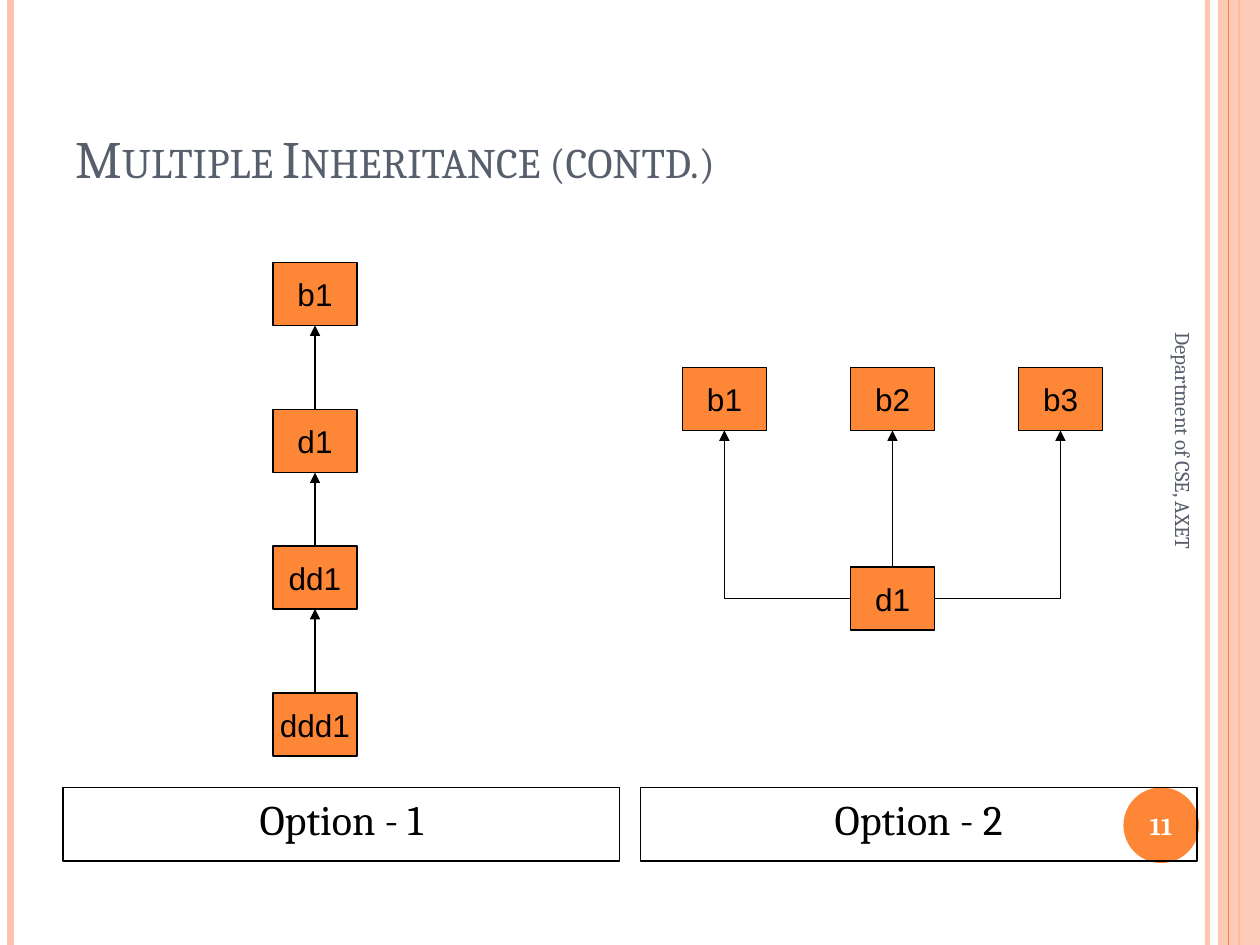
import pptx
import pptx.dml.color
import pptx.enum.shapes
import pptx.enum.text
import pptx.oxml
import pptx.oxml.ns
import pptx.util

SCALE = 914400 // 120
ORANGE, PEACH, SLATE, BLACK, WHITE = "FE8637", "FEC3AE", "575F6D", "000000", "FFFFFF"
NODE_WIDTH, NODE_HEIGHT = 80, 60
TOP, LEFT, BOTTOM, RIGHT = range(4)
SHAPE = pptx.enum.shapes.MSO_SHAPE
CONNECTOR = pptx.enum.shapes.MSO_CONNECTOR
ALIGN = pptx.enum.text.PP_ALIGN
ANCHOR = pptx.enum.text.MSO_ANCHOR


def px(*lengths):
    """Turn px lengths into EMU."""
    return [pptx.util.Emu(length * SCALE) for length in lengths]


def color(value):
    """Turn a hex string into a colour."""
    return pptx.dml.color.RGBColor.from_string(value)


def append_xml(parent, tag, **attributes):
    """Append a DrawingML element to a parent and return it."""
    element = pptx.oxml.parse_xml(f"<a:{tag} {pptx.oxml.ns.nsdecls('a')}/>")
    for name, value in attributes.items():
        element.set(name, value)
    parent.append(element)
    return element


def set_opacity(shape, percent):
    """Make the colour of a shape or line partly transparent."""
    for element in shape.element.xpath("./p:spPr//a:srgbClr"):
        append_xml(element, "alpha", val=str(percent * 1000))


def set_line(shape, value, points):
    """Set the colour and width of an outline or line."""
    shape.line.color.rgb = color(value)
    shape.line.width = pptx.util.Pt(points)


def write(shape, text, size, font, value, align, anchor, bold=False):
    """Write one formatted run and return its paragraph."""
    frame = shape.text_frame
    frame.auto_size = pptx.enum.text.MSO_AUTO_SIZE.NONE
    frame.word_wrap = True
    frame.vertical_anchor = anchor
    paragraph = frame.paragraphs[0]
    paragraph.alignment = align
    run = paragraph.add_run()
    run.text = text
    run.font.size = pptx.util.Pt(size)
    run.font.name = font
    run.font.bold = bold
    run.font.color.rgb = color(value)
    return paragraph


def place(slide, shape, box):
    """Bring a placeholder to the front and fit it to a box."""
    shape.left, shape.top, shape.width, shape.height = px(*box)
    slide.shapes.element.append(shape.element)


def add_filled(slide, kind, box, value):
    """Add a flat filled shape without an outline."""
    shape = slide.shapes.add_shape(kind, *px(*box))
    shape.shadow.inherit = False
    shape.fill.solid()
    shape.fill.fore_color.rgb = color(value)
    shape.line.fill.background()
    return shape


def add_line(slide, kind, ends, value, points):
    """Add a line without a shadow."""
    line = slide.shapes.add_connector(kind, *px(*ends))
    set_line(line, value, points)
    append_xml(line.element.spPr, "effectLst")
    return line


def add_rail(slide, x, value, points):
    """Add a line over the full slide height."""
    return add_line(slide, CONNECTOR.STRAIGHT, (x, 0, x, 900), value, points)


def add_frame(slide):
    """Add the side bands, page number and footer."""
    set_opacity(add_rail(slide, 1150, PEACH, 3), 93)
    add_rail(slide, 10, PEACH, 4.5)
    add_rail(slide, 1180, ORANGE, 1.5)
    set_opacity(add_filled(slide, SHAPE.RECTANGLE, (1160, 0, 40, 900), PEACH), 87)
    add_rail(slide, 1170, ORANGE, 0.75)
    badge = add_filled(slide, SHAPE.OVAL, (1070, 750, 72, 72), ORANGE)
    write(badge, "11", 14, "Cambria", WHITE, ALIGN.CENTER, ANCHOR.MIDDLE, True)
    badge.text_frame.margin_left = badge.text_frame.margin_right = 0
    footer = slide.shapes.add_textbox(*px(917, 491, 420, 48))
    footer.rotation = 90
    write(footer, "Department of CSE, AXET", 12, "Cambria", SLATE, ALIGN.LEFT, ANCHOR.MIDDLE)


def add_title(slide, box):
    """Fill the title placeholder in small capitals."""
    title = slide.shapes.title
    place(slide, title, box)
    write(title, "Multiple Inheritance (contd.)", 30, "Cambria", SLATE, ALIGN.LEFT, ANCHOR.BOTTOM)
    title.element.xpath(".//a:rPr")[0].set("cap", "small")


def add_caption(slide, shape, box, text):
    """Fill a body placeholder with an outlined caption."""
    place(slide, shape, box)
    set_line(shape, BLACK, 0.75)
    paragraph = write(shape, text, 24, "Cambria", BLACK, ALIGN.CENTER, ANCHOR.TOP)
    paragraph.space_before = pptx.util.Pt(6)
    properties = shape.element.xpath(".//a:pPr")[0]
    indent = px(36)[0]
    properties.set("marL", str(indent))
    properties.set("indent", str(-indent))
    append_xml(properties, "buNone")


def add_node(slide, left, top, text):
    """Add one class box."""
    node = add_filled(slide, SHAPE.RECTANGLE, (left, top, NODE_WIDTH, NODE_HEIGHT), ORANGE)
    set_line(node, BLACK, 0.75)
    write(node, text, 18, "Arial", BLACK, ALIGN.CENTER, ANCHOR.MIDDLE)
    node.text_frame.word_wrap = False
    return node


def add_arrow(slide, derived, side, base):
    """Point an arrow from a side of a derived class to its base class."""
    kind = CONNECTOR.STRAIGHT if side == TOP else CONNECTOR.ELBOW
    arrow = add_line(slide, kind, (0, 0, 0, 0), BLACK, 0.75)
    arrow.begin_connect(derived, side)
    arrow.end_connect(base, BOTTOM)
    if side != TOP:
        arrow.element.xpath("./p:spPr/a:prstGeom")[0].set("prst", "bentConnector2")
    append_xml(arrow.element.xpath("./p:spPr/a:ln")[0], "tailEnd", type="triangle")


def add_chain(slide, left, top):
    """Add the column of classes that each derive from the one above."""
    levels = (("b1", 0), ("d1", 140), ("dd1", 270), ("ddd1", 410))
    nodes = [add_node(slide, left, top + offset, text) for text, offset in levels]
    for base, derived in zip(nodes, nodes[1:]):
        add_arrow(slide, derived, TOP, base)


def add_fan(slide, left, top):
    """Add three base classes and the class derived from them all."""
    step = 160
    bases = [add_node(slide, left + step * i, top, f"b{i + 1}") for i in range(3)]
    derived = add_node(slide, left + step, top + 190, "d1")
    for side, base in zip((LEFT, TOP, RIGHT), bases):
        add_arrow(slide, derived, side, base)


def main():
    """Build and save the slide."""
    presentation = pptx.Presentation()
    presentation.slide_width, presentation.slide_height = px(1200, 900)
    slide = presentation.slides.add_slide(presentation.slide_layouts[3])
    add_frame(slide)
    add_title(slide, (60, 36, 980, 150))
    captions = [slide.placeholders[1], slide.placeholders[2]]
    for i, caption in enumerate(captions):
        add_caption(slide, caption, (60 + 550 * i, 750, 530, 70), f"Option - {i + 1}")
    add_chain(slide, 260, 250)
    add_fan(slide, 650, 350)
    presentation.save("out.pptx")


if __name__ == "__main__":
    main()
